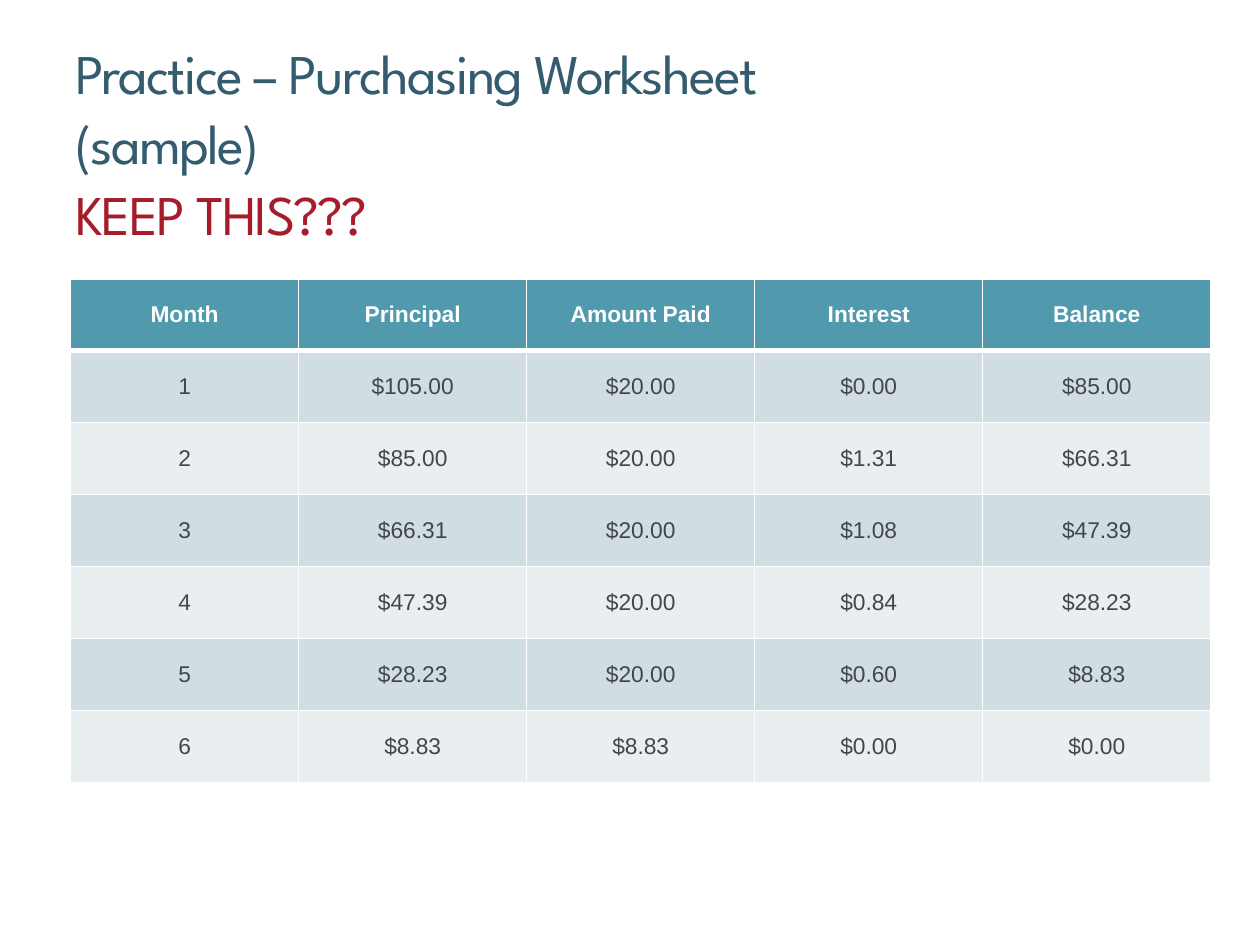
from lxml import etree
from pptx import Presentation, util as u
from pptx.dml.color import RGBColor
from pptx.enum import text
from pptx.oxml.ns import qn

SLIDE_WIDTH, SLIDE_HEIGHT = u.Inches(10), u.Inches(7.5)
TITLE_BOX = (0.06, 0.037, 0.88, 0.147)
TABLE_BOX = (0.056, 0.295, 0.905, 0.533)
TITLE_LINES = [
    ("Practice – Purchasing Worksheet", "345C6F"),
    ("(sample)", "345C6F"),
    ("KEEP THIS???", "A61C2A"),
]
HEADINGS = ["Month", "Principal", "Amount Paid", "Interest", "Balance"]
PAYMENTS = [
    ["1", "$105.00", "$20.00", "$0.00", "$85.00"],
    ["2", "$85.00", "$20.00", "$1.31", "$66.31"],
    ["3", "$66.31", "$20.00", "$1.08", "$47.39"],
    ["4", "$47.39", "$20.00", "$0.84", "$28.23"],
    ["5", "$28.23", "$20.00", "$0.60", "$8.83"],
    ["6", "$8.83", "$8.83", "$0.00", "$0.00"],
]
HEADER_FILL = "5199AD"
BAND_FILLS = ["E9EFF1", "D0DEE3"]


def color(value):
    return RGBColor.from_string(value)


def place(box):
    left, top, width, height = box
    return (int(left * SLIDE_WIDTH), int(top * SLIDE_HEIGHT),
            int(width * SLIDE_WIDTH), int(height * SLIDE_HEIGHT))


def style_font(font, name, size, value, bold=False):
    font.name = name
    font.size = u.Pt(size)
    font.bold = bold
    font.color.rgb = color(value)


def add_title(slide, box):
    frame = slide.shapes.add_textbox(*place(box)).text_frame
    frame.word_wrap = True
    frame.margin_left = frame.margin_top = 0
    frame.margin_right = frame.margin_bottom = 0
    frame.text = "\v".join(line for line, value in TITLE_LINES)
    paragraph = frame.paragraphs[0]
    paragraph.line_spacing = 1.05
    for run, (line, value) in zip(paragraph.runs, TITLE_LINES):
        style_font(run.font, "League Spartan", 32, value)
        run.font._element.set("spc", "-100")


def add_borders(cell, bottom_width):
    properties = cell._tc.get_or_add_tcPr()
    widths = {"a:lnL": 1, "a:lnR": 1, "a:lnT": 1, "a:lnB": bottom_width}
    for position, (tag, width) in enumerate(widths.items()):
        line = etree.Element(qn(tag), w=str(u.Pt(width)))
        fill = etree.SubElement(line, qn("a:solidFill"))
        etree.SubElement(fill, qn("a:srgbClr"), val="FFFFFF")
        properties.insert(position, line)


def style_cell(cell, row):
    header = row == 0
    cell.vertical_anchor = text.MSO_ANCHOR.MIDDLE
    cell.fill.solid()
    cell.fill.fore_color.rgb = color(HEADER_FILL if header else BAND_FILLS[row % 2])
    add_borders(cell, 3 if header else 1)
    paragraph = cell.text_frame.paragraphs[0]
    paragraph.alignment = text.PP_ALIGN.CENTER
    style_font(paragraph.runs[0].font, "Arial", 13,
               "FFFFFF" if header else "44464A", header)


def add_payment_table(slide, box):
    rows = [HEADINGS] + PAYMENTS
    table = slide.shapes.add_table(len(rows), len(HEADINGS), *place(box)).table
    for row, values in enumerate(rows):
        for column, value in enumerate(values):
            cell = table.cell(row, column)
            cell.text_frame.text = value
            style_cell(cell, row)


def main():
    presentation = Presentation()
    presentation.slide_width = SLIDE_WIDTH
    presentation.slide_height = SLIDE_HEIGHT
    slide = presentation.slides.add_slide(presentation.slide_layouts[6])
    add_payment_table(slide, TABLE_BOX)
    add_title(slide, TITLE_BOX)
    presentation.save("out.pptx")


if __name__ == "__main__":
    main()
